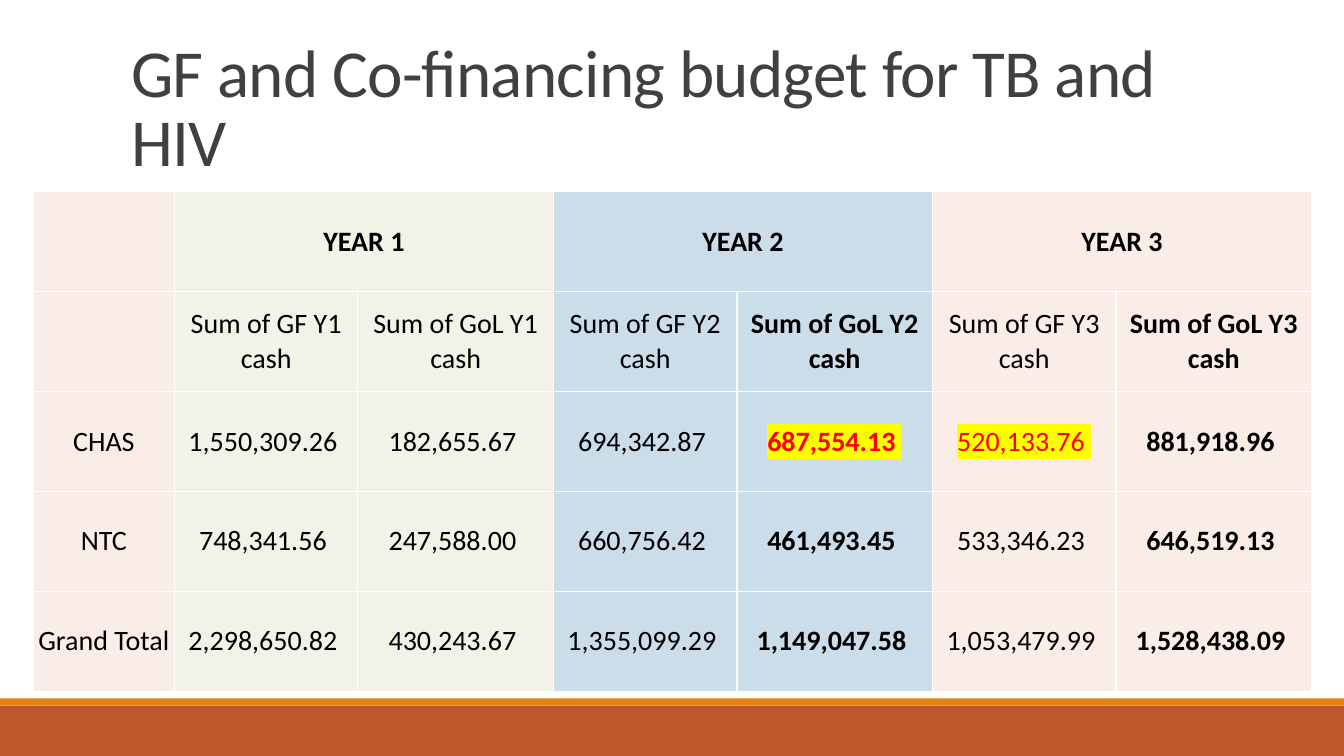
from lxml import etree
from pptx import Presentation
from pptx.dml.color import RGBColor
from pptx.enum.shapes import MSO_CONNECTOR, MSO_SHAPE
from pptx.enum.text import MSO_ANCHOR, PP_ALIGN
from pptx.oxml.ns import qn
from pptx.util import Inches, Pt

RECTANGLE = MSO_SHAPE.RECTANGLE
STRAIGHT = MSO_CONNECTOR.STRAIGHT
MIDDLE = MSO_ANCHOR.MIDDLE
LEFT, CENTER = PP_ALIGN.LEFT, PP_ALIGN.CENTER

FONT = "Calibri"
COLORS = {
    "footer": "BD582C", "stripe": "E48312", "rule": "808080",
    "title": "404040", "text": "000000", "border": "FFFFFF",
    "rose": "FAEDE7", "cream": "F3F2E6", "blue": "CCDDEA",
    "alert": "FF0000", "marker": "FFFF00",
}


def rgb(name):
    return RGBColor.from_string(COLORS[name])


def add_white_borders(cell):
    tc_pr = cell._tc.get_or_add_tcPr()
    for position, side in enumerate(("a:lnL", "a:lnR", "a:lnT", "a:lnB")):
        line = etree.Element(qn(side), w=str(Pt(1)))
        fill = etree.SubElement(line, qn("a:solidFill"))
        etree.SubElement(fill, qn("a:srgbClr"), val=COLORS["border"])
        tc_pr.insert(position, line)


prs = Presentation()
prs.slide_width, prs.slide_height = Inches(13.33), Inches(7.5)
slide = prs.slides.add_slide(prs.slide_layouts[5])

# Footer bands and the rule under the title
for color, top, height in (("footer", 7, 0.5), ("stripe", 6.93, 0.07)):
    band = slide.shapes.add_shape(RECTANGLE, 0, Inches(top), prs.slide_width, Inches(height))
    band.shadow.inherit = False
    band.fill.solid()
    band.fill.fore_color.rgb = rgb(color)
    band.line.fill.background()

title_rule = slide.shapes.add_connector(
    STRAIGHT, Inches(1.31), Inches(1.9), Inches(12.21), Inches(1.9))
title_rule.line.color.rgb = rgb("rule")
title_rule.line.width = Pt(0.5)
etree.SubElement(title_rule._element.spPr, qn("a:effectLst"))

# Title
title = slide.shapes.title
title.left, title.top = Inches(1.2), Inches(0.31)
title.width, title.height = Inches(11.44), Inches(1.59)
title.text_frame.word_wrap = True
title.text_frame.vertical_anchor = MIDDLE
title.text_frame.margin_right = Inches(0.2)
heading = title.text_frame.paragraphs[0]
heading.alignment = LEFT
heading.line_spacing = 0.85
run = heading.add_run()
run.text = "GF and Co-financing budget for TB and HIV"
run.font.name, run.font.size = FONT, Pt(48)
run.font.color.rgb = rgb("title")
run.font._element.set("spc", "-50")

# Budget table
BUDGET = [
    ["", "YEAR 1", "", "YEAR 2", "", "YEAR 3", ""],
    [""] + [f"Sum of {fund} Y{year} cash" for year in (1, 2, 3) for fund in ("GF", "GoL")],
    ["CHAS", "1,550,309.26 ", "182,655.67 ", "694,342.87 ",
     "687,554.13 ", "520,133.76 ", "881,918.96 "],
    ["NTC", "748,341.56 ", "247,588.00 ", "660,756.42 ",
     "461,493.45 ", "533,346.23 ", "646,519.13 "],
    ["Grand Total", "2,298,650.82 ", "430,243.67 ", "1,355,099.29 ",
     "1,149,047.58 ", "1,053,479.99 ", "1,528,438.09 "],
]
COLUMN_WIDTHS = [1.4] + [1.82, 1.94] * 3
COLUMN_FILLS = ["rose", "cream", "cream", "blue", "blue", "rose", "rose"]
BOLD_COLUMNS = (4, 6)
HIGHLIGHTED = ((2, 4), (2, 5))

budget = slide.shapes.add_table(
    len(BUDGET), len(COLUMN_WIDTHS),
    Inches(0.33), Inches(1.9), Inches(12.68), Inches(4.96)).table
budget.first_row = budget.horz_banding = False
for column, width in zip(budget.columns, COLUMN_WIDTHS):
    column.width = Inches(width)
for first in (1, 3, 5):
    budget.cell(0, first).merge(budget.cell(0, first + 1))

for r, values in enumerate(BUDGET):
    for c, value in enumerate(values):
        cell = budget.cell(r, c)
        cell.fill.solid()
        cell.fill.fore_color.rgb = rgb(COLUMN_FILLS[c])
        add_white_borders(cell)
        cell.vertical_anchor = MIDDLE
        cell.margin_left = cell.margin_right = cell.margin_top = cell.margin_bottom = 0
        if not value:
            continue
        paragraph = cell.text_frame.paragraphs[0]
        paragraph.alignment = CENTER
        run = paragraph.add_run()
        run.text = value
        run.font.name, run.font.size = FONT, Pt(20)
        run.font.bold = r == 0 or c in BOLD_COLUMNS
        marked = (r, c) in HIGHLIGHTED
        run.font.color.rgb = rgb("alert" if marked else "text")
        if marked:
            highlight = etree.Element(qn("a:highlight"))
            etree.SubElement(highlight, qn("a:srgbClr"), val=COLORS["marker"])
            run.font._element.find(qn("a:solidFill")).addnext(highlight)

prs.save("out.pptx")
